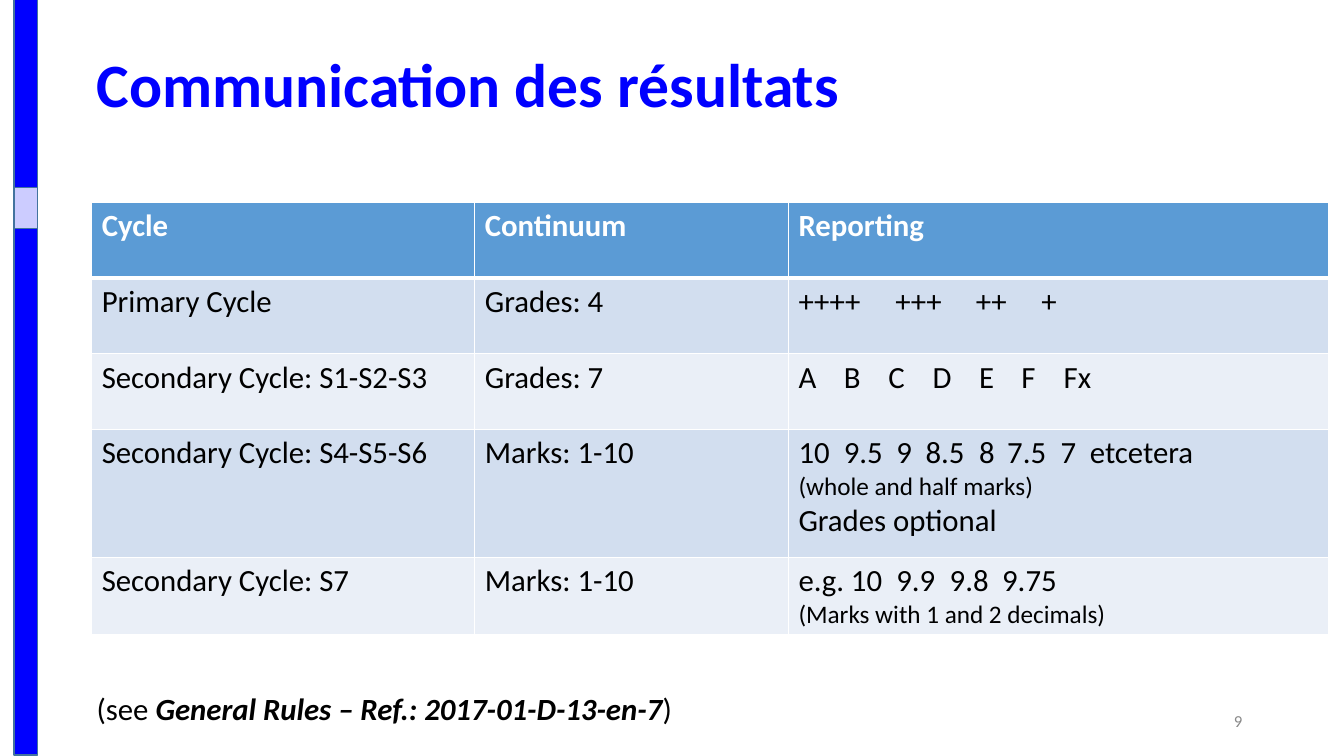
from lxml import etree
from pptx import Presentation
from pptx.dml.color import RGBColor
from pptx.enum import shapes, text
from pptx.oxml import ns
from pptx.util import Inches, Pt


def color(code):
    return RGBColor.from_string(code)


def write(para, words, **look):
    run = para.add_run()
    run.text = words
    tint = look.pop("tint", "000000")
    style = {"name": "Calibri", "size": Pt(22), "bold": False, "italic": False}
    style.update(look)
    for key, value in style.items():
        setattr(run.font, key, value)
    run.font.color.rgb = color(tint)


prs = Presentation()
prs.slide_width, prs.slide_height = Inches(13.33), Inches(7.5)
slide = prs.slides.add_slide(prs.slide_layouts[6])

# Text boxes: title, source note, page number
boxes = [
    ((0.77, 0.27, 12.57, 1.2), {"word_wrap": True, "vertical_anchor": text.MSO_ANCHOR.MIDDLE},
     {"line_spacing": 0.9}, 0.09,
     [("Communication des résultats", {"size": Pt(44), "bold": True, "tint": "0000FF"})]),
    ((0.77, 6.79, 6.06, 0.47), {"word_wrap": False, "auto_size": text.MSO_AUTO_SIZE.SHAPE_TO_FIT_TEXT},
     {"space_before": Pt(6)}, 0.09,
     [("(see ", {}),
      ("General Rules – Ref.: 2017-01-D-13-en-7", {"bold": True, "italic": True}),
      (")", {})]),
    ((9.42, 6.95, 3, 0.4), {"word_wrap": True, "vertical_anchor": text.MSO_ANCHOR.MIDDLE},
     {"alignment": text.PP_ALIGN.RIGHT}, 0,
     [("9", {"size": Pt(12), "tint": "898989"})]),
]
for place, frame, form, indent, runs in boxes:
    box = slide.shapes.add_textbox(*map(Inches, place)).text_frame
    para = box.paragraphs[0]
    for item, values in ((box, frame), (para, form)):
        for key, value in values.items():
            setattr(item, key, value)
    para._p.get_or_add_pPr().set("marL", str(Inches(indent)))
    for words, look in runs:
        write(para, words, **look)

# Side bar and its marker
for top, height, fill in ((-0.01, 7.5, "0000FF"), (1.86, 0.41, "CCCCFF")):
    bar = slide.shapes.add_shape(shapes.MSO_SHAPE.RECTANGLE, Inches(0.14), Inches(top),
                                 Inches(0.23), Inches(height))
    bar.shadow.inherit = False
    bar.fill.solid()
    bar.fill.fore_color.rgb = color(fill)
    bar.line.color.rgb = color("43739E")
    bar.line.width = Pt(1)

# Table content: a cell is a list of lines, a line is (words, size, tab stops)
plus = ("++++\t+++\t++\t+", 22, (0.96, 1.76, 2.41))
letters = ("A\tB\tC\tD\tE\tF\tFx", 22, (0.45, 0.89, 1.33, 1.79, 2.21, 2.63))
marks = ("10\t9.5\t9\t8.5\t8\t7.5\t7\tetcetera", 22, (0.45, 0.97, 1.26, 1.79, 2.07, 2.6, 2.89))
decimals = ("e.g. 10\t9.9\t9.8\t9.75", 22, (0.97, 1.5, 2.02))
rows = [
    ("Cycle", "Continuum", [("Reporting", 22, ())]),
    ("Primary Cycle", "Grades: 4", [plus]),
    ("Secondary Cycle: S1-S2-S3", "Grades: 7", [letters]),
    ("Secondary Cycle: S4-S5-S6", "Marks: 1-10",
     [marks, ("(whole and half marks)", 18, ()), ("Grades optional", 22, ())]),
    ("Secondary Cycle: S7", "Marks: 1-10",
     [decimals, ("(Marks with 1 and 2 decimals)", 18, ())]),
]
widths = (3.8, 3.11, 5.36)
heights = (0.75, 0.75, 0.75, 1.27, 0.77)
table = slide.shapes.add_table(len(rows), len(widths), Inches(0.91), Inches(2.01),
                               Inches(sum(widths)), Inches(sum(heights))).table
for col, width in zip(table.columns, widths):
    col.width = Inches(width)
for row, height in zip(table.rows, heights):
    row.height = Inches(height)

for r, row in enumerate(rows):
    head = r == 0
    for c, lines in enumerate(row):
        cell = table.cell(r, c)

        # White borders, thick under the header
        props = cell._tc.get_or_add_tcPr()
        for side in "LRTB":
            thick = (head and side == "B") or (r == 1 and side == "T")
            edge = etree.SubElement(props, ns.qn("a:ln" + side), w=str(Pt(3 if thick else 1)))
            paint = etree.SubElement(edge, ns.qn("a:solidFill"))
            etree.SubElement(paint, ns.qn("a:srgbClr"), val="FFFFFF")
        cell.fill.solid()
        cell.fill.fore_color.rgb = color("5B9BD5" if head else ("EAEFF7", "D2DEEF")[r % 2])

        # Lines of text with tab stops
        if isinstance(lines, str):
            lines = [(lines, 22, ())]
        for n, (words, size, stops) in enumerate(lines):
            para = cell.text_frame.add_paragraph() if n else cell.text_frame.paragraphs[0]
            write(para, words, size=Pt(size), bold=head, tint="FFFFFF" if head else "000000")
            if stops:
                tabs = etree.SubElement(para._p.get_or_add_pPr(), ns.qn("a:tabLst"))
                for stop in stops:
                    etree.SubElement(tabs, ns.qn("a:tab"), pos=str(Inches(stop)), algn="l")

prs.save("out.pptx")
